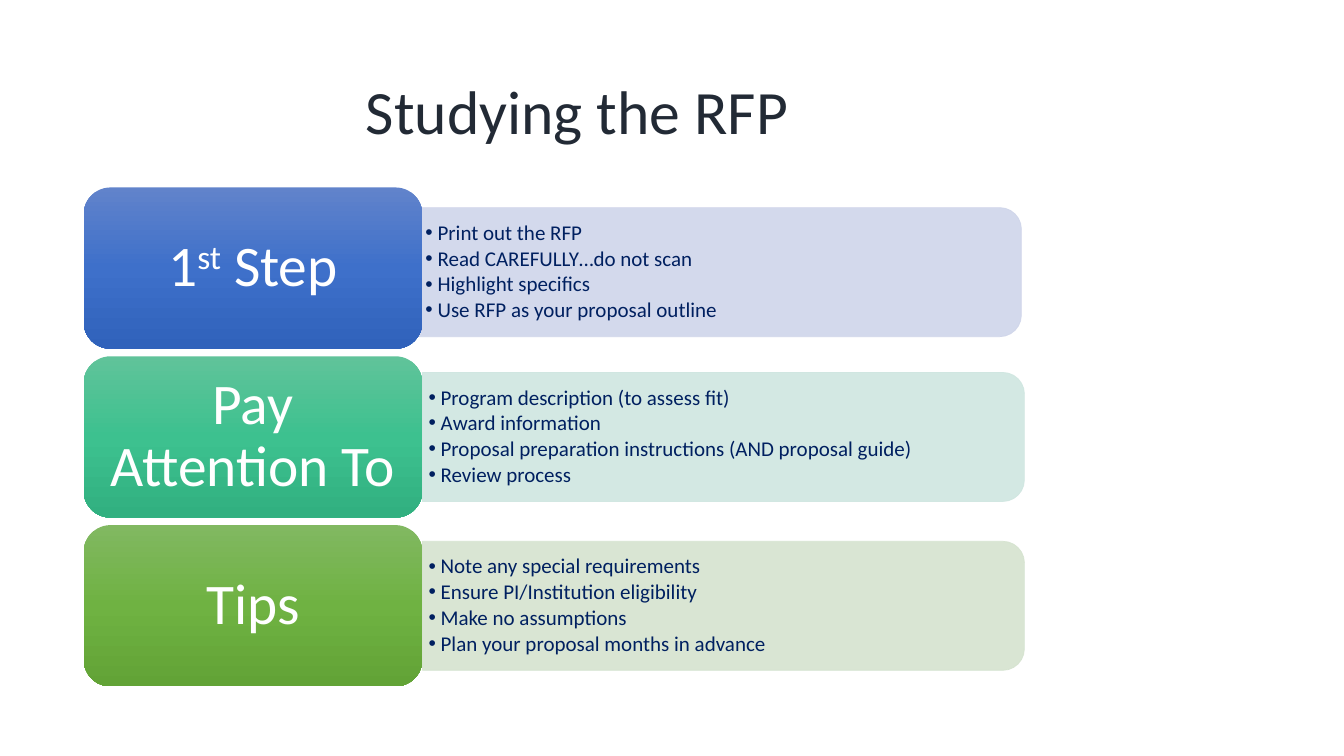
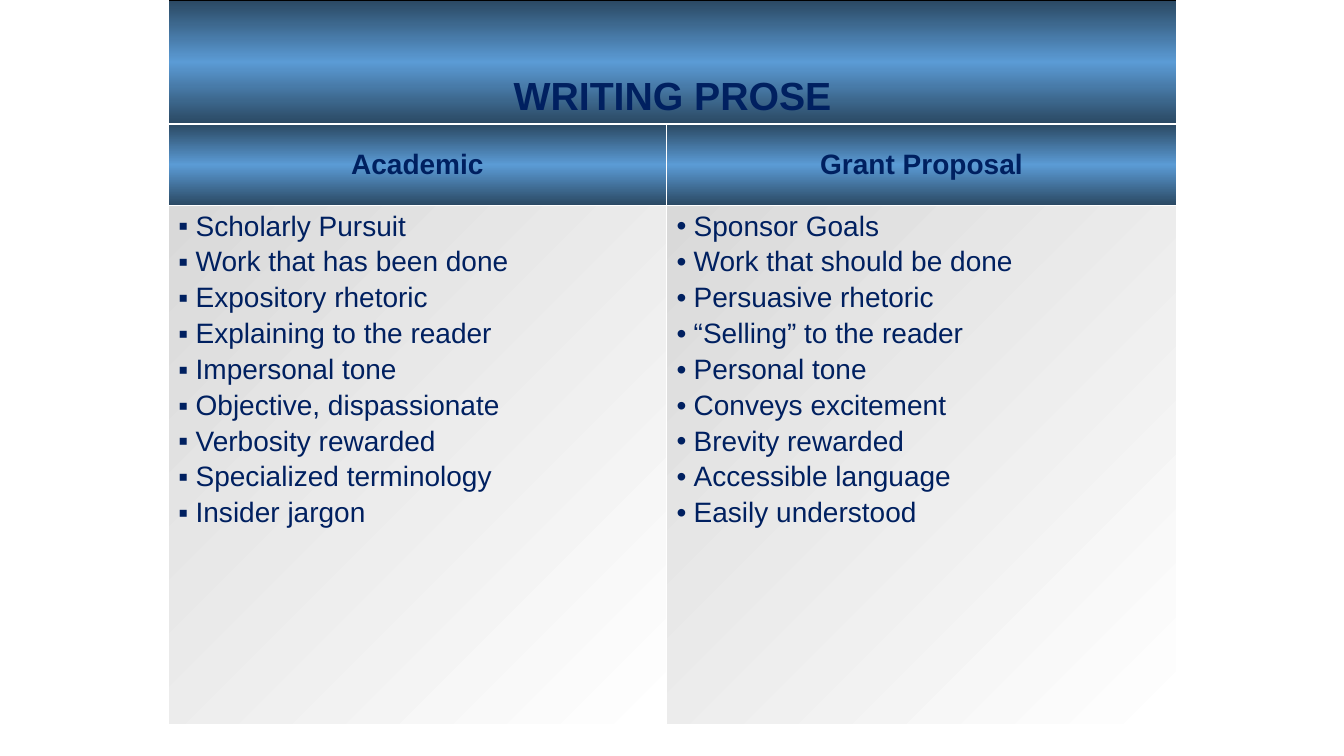
"""Build two slides: a three-step guide to an RFP and a table comparing prose styles."""
from copy import deepcopy

from lxml.etree import SubElement
from pptx import Presentation
from pptx.dml.color import RGBColor
from pptx.enum.shapes import MSO_SHAPE as Shape
from pptx.enum.text import MSO_ANCHOR as Anchor, MSO_AUTO_SIZE as AutoSize, PP_ALIGN as Align
from pptx.oxml.ns import qn
from pptx.util import Inches, Pt

WHITE = RGBColor(0xFF, 0xFF, 0xFF)
BLACK = RGBColor(0x00, 0x00, 0x00)
NAVY = RGBColor(0x00, 0x20, 0x60)
SLATE = RGBColor(0x22, 0x2A, 0x35)
STEEL = RGBColor(0x2A, 0x48, 0x62)
SKY = RGBColor(0x5B, 0x9B, 0xD5)
SILVER = RGBColor(0xD9, 0xD9, 0xD9)
BLUES = [RGBColor(0x61, 0x83, 0xCB), RGBColor(0x3E, 0x70, 0xCA), RGBColor(0x30, 0x62, 0xBB)]
TEALS = [RGBColor(0x60, 0xC3, 0x9A), RGBColor(0x3D, 0xC1, 0x8F), RGBColor(0x31, 0xB0, 0x80)]
GREENS = [RGBColor(0x81, 0xB8, 0x61), RGBColor(0x6F, 0xB2, 0x42), RGBColor(0x62, 0xA3, 0x36)]
PALE_BLUE = RGBColor(0xCF, 0xD5, 0xEA)
PALE_TEAL = RGBColor(0xCF, 0xE6, 0xE0)
PALE_GREEN = RGBColor(0xD5, 0xE3, 0xCF)
DOWN, DIAGONAL = 270, 315

STEPS = [
    {"label": [("1", False), ("st", True), (" Step", False)],
     "colors": BLUES, "pale": PALE_BLUE, "shift": (-0.03, 0.04),
     "points": ["Print out the RFP", "Read CAREFULLY…do not scan", "Highlight specifics",
                "Use RFP as your proposal outline"]},
    {"label": [("Pay Attention To", False)],
     "colors": TEALS, "pale": PALE_TEAL, "shift": (0, 0),
     "points": ["Program description (to assess fit)", "Award information",
                "Proposal preparation instructions (AND proposal guide)", "Review process"]},
    {"label": [("Tips", False)],
     "colors": GREENS, "pale": PALE_GREEN, "shift": (0, 0),
     "points": ["Note any special requirements", "Ensure PI/Institution eligibility",
                "Make no assumptions", "Plan your proposal months in advance"]},
]
PROSE_TITLE = "WRITING PROSE"
PROSE_COLUMNS = [
    ("Academic", "▪", 4.94,
     ["Scholarly Pursuit", "Work that has been done", "Expository rhetoric",
      "Explaining to the reader", "Impersonal tone", "Objective, dispassionate",
      "Verbosity rewarded", "Specialized terminology", "Insider jargon"]),
    ("Grant Proposal", "•", 5.06,
     ["Sponsor Goals", "Work that should be done", "Persuasive rhetoric",
      "“Selling” to the reader", "Personal tone", "Conveys excitement",
      "Brevity rewarded", "Accessible language", "Easily understood"]),
]
ROW_HEIGHTS = [1.23, 0.81, 5.15]

LABEL_LEFT, LABEL_TOP, LABEL_WIDTH, LABEL_HEIGHT = 0.83, 1.86, 3.36, 1.6
STEP_PITCH = 1.675
BAR_LENGTH, BAR_HEIGHT = 5.97, 1.28
POINTS_WIDTH, POINTS_HEIGHT = 5.91, 1.15


def style(para, name, size, color, bold=False):
    """Format every run of a paragraph."""
    for span in para.runs:
        span.font.name, span.font.size, span.font.bold = name, Pt(size), bold
        span.font.color.rgb = color


def add_bullet(para, mark, indent):
    """Give a paragraph a hanging bullet."""
    props = para._p.get_or_add_pPr()
    props.set("marL", str(Inches(indent)))
    props.set("indent", str(-Inches(indent)))
    SubElement(props, qn("a:buFont"), typeface="Arial")
    SubElement(props, qn("a:buChar"), char=mark)


def fill_list(frame, lines, mark, indent):
    """Write bulleted lines and return their paragraphs."""
    frame.text = "\n".join(lines)
    for para in frame.paragraphs:
        add_bullet(para, mark, indent)
    return frame.paragraphs


def set_gradient(fill, props, colors, angle):
    """Fill with evenly spaced gradient colours."""
    fill.gradient()
    fill.gradient_angle = angle
    stops = props.find(qn("a:gradFill")).find(qn("a:gsLst"))
    while len(stops) < len(colors):
        stops.append(deepcopy(stops[0]))
    for index, (stop, color) in enumerate(zip(fill.gradient_stops, colors)):
        stop.color.rgb = color
        stop.position = index / (len(colors) - 1)


def set_margins(frame, side, end):
    """Set the insets of a frame in inches."""
    frame.margin_left = frame.margin_right = Inches(side)
    frame.margin_top = frame.margin_bottom = Inches(end)


def add_bar(slide, center_x, center_y, color):
    """Draw a translucent bar rounded at its right end."""
    bar = slide.shapes.add_shape(
        Shape.ROUND_2_SAME_RECTANGLE,
        Inches(center_x - BAR_HEIGHT / 2), Inches(center_y - BAR_LENGTH / 2),
        Inches(BAR_HEIGHT), Inches(BAR_LENGTH))
    bar.rotation = 90
    bar.shadow.inherit = False
    bar.line.width = Pt(0.5)
    for fill in (bar.fill, bar.line.fill):
        fill.solid()
        fill.fore_color.rgb = color
    for tint in bar._element.spPr.iter(qn("a:srgbClr")):
        SubElement(tint, qn("a:alpha"), val="90000")


def add_points(slide, left, center_y, points):
    """Place the bulleted details of a step."""
    box = slide.shapes.add_textbox(
        Inches(left), Inches(center_y - POINTS_HEIGHT / 2),
        Inches(POINTS_WIDTH), Inches(POINTS_HEIGHT))
    frame = box.text_frame
    frame.word_wrap = True
    frame.vertical_anchor = Anchor.MIDDLE
    set_margins(frame, 0.06, 0.03)
    for para in fill_list(frame, points, "•", 0.12):
        para.line_spacing, para.space_after = 0.9, Pt(2.2)
        style(para, "Calibri", 15, NAVY)


def add_label(slide, top, label, colors):
    """Draw the rounded name plate of a step."""
    plate = slide.shapes.add_shape(
        Shape.ROUNDED_RECTANGLE, Inches(LABEL_LEFT), Inches(top),
        Inches(LABEL_WIDTH), Inches(LABEL_HEIGHT))
    plate.shadow.inherit = False
    plate.line.fill.background()
    set_gradient(plate.fill, plate._element.spPr, colors, DOWN)
    frame = plate.text_frame
    frame.word_wrap = True
    frame.vertical_anchor = Anchor.MIDDLE
    set_margins(frame, 0.18, 0.1)
    para = frame.paragraphs[0]
    para.alignment, para.line_spacing = Align.CENTER, 0.9
    for text, raised in label:
        span = para.add_run()
        span.text = text
        if raised:
            span.font._element.set("baseline", "30000")
    style(para, "Calibri", 41, WHITE)


def build_steps(deck):
    """Make the slide of three steps."""
    slide = deck.slides.add_slide(deck.slide_layouts[5])
    title = slide.shapes.title
    title.left, title.top = Inches(3.53), Inches(0.41)
    title.width, title.height = Inches(11.5), Inches(1.45)
    frame = title.text_frame
    frame.text = "Studying the RFP"
    frame.auto_size = AutoSize.NONE
    frame.vertical_anchor = Anchor.MIDDLE
    para = frame.paragraphs[0]
    para.alignment, para.line_spacing = Align.LEFT, 0.9
    style(para, "Calibri", 44, SLATE)
    bar_left = LABEL_LEFT + LABEL_WIDTH
    for index, step in enumerate(STEPS):
        top = LABEL_TOP + index * STEP_PITCH
        shift_x, shift_y = step["shift"]
        left = bar_left + shift_x
        center_y = top + LABEL_HEIGHT / 2 + shift_y
        add_bar(slide, left + BAR_LENGTH / 2, center_y, step["pale"])
        add_points(slide, left, center_y, step["points"])
        add_label(slide, top, step["label"], step["colors"])


def set_borders(cell, top_color):
    """Give a cell one-point borders, white but for the top."""
    props = cell._tc.get_or_add_tcPr()
    for side, color in (("L", WHITE), ("R", WHITE), ("T", top_color), ("B", WHITE)):
        line = SubElement(props, qn(f"a:ln{side}"), w=str(Pt(1)))
        SubElement(SubElement(line, qn("a:solidFill")), qn("a:srgbClr"), val=str(color))


def set_heading(cell, text, size, anchor):
    """Write a bold centred heading in a cell."""
    cell.text = text
    cell.vertical_anchor = anchor
    para = cell.text_frame.paragraphs[0]
    para.alignment = Align.CENTER
    style(para, "Arial", size, NAVY, bold=True)


def build_prose(deck):
    """Make the slide of the comparison table."""
    slide = deck.slides.add_slide(deck.slide_layouts[6])
    table = slide.shapes.add_table(
        len(ROW_HEIGHTS), len(PROSE_COLUMNS), Inches(1.67), Inches(0),
        Inches(10), Inches(sum(ROW_HEIGHTS))).table
    table.first_row = table.horz_banding = False
    for row_index, height in enumerate(ROW_HEIGHTS):
        table.rows[row_index].height = Inches(height)
        heading = row_index < 2
        colors = [STEEL, SKY, STEEL] if heading else [SILVER, WHITE]
        for cell in table.rows[row_index].cells:
            set_borders(cell, WHITE if row_index else BLACK)
            set_gradient(cell.fill, cell._tc.tcPr, colors, DOWN if heading else DIAGONAL)
    table.cell(0, 0).merge(table.cell(0, 1))
    set_heading(table.cell(0, 0), PROSE_TITLE, 28, Anchor.BOTTOM)
    for index, (name, mark, width, lines) in enumerate(PROSE_COLUMNS):
        table.columns[index].width = Inches(width)
        set_heading(table.cell(1, index), name, 20, Anchor.MIDDLE)
        for para in fill_list(table.cell(2, index).text_frame, lines, mark, 0.17):
            para.space_before = Pt(3.3)
            style(para, "Arial", 20, NAVY)


def main():
    """Build and save the deck."""
    deck = Presentation()
    deck.slide_width, deck.slide_height = Inches(13.33), Inches(7.5)
    build_steps(deck)
    build_prose(deck)
    deck.save("out.pptx")


if __name__ == "__main__":
    main()
